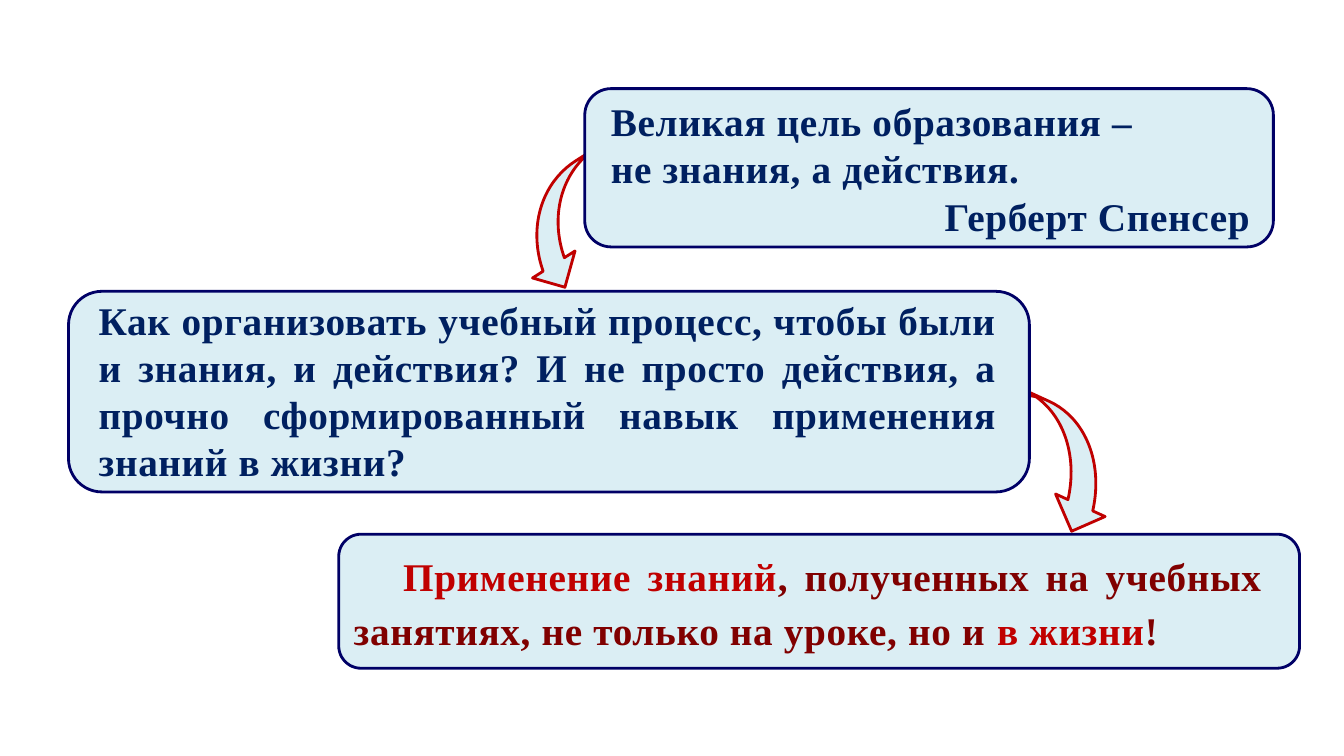
from pptx import Presentation
from pptx import util as u
from pptx.dml.color import RGBColor
from pptx.enum import shapes, text

NAVY, RED, MAROON = "002060", "C00000", "800000"
LEFT, RIGHT, FULL = text.PP_ALIGN.LEFT, text.PP_ALIGN.RIGHT, text.PP_ALIGN.JUSTIFY


def rgb(code):
    return RGBColor.from_string(code)


def draw(kind, area, edge):
    shape = deck.add_shape(kind, *map(u.Inches, area))
    shape.shadow.inherit = False
    shape.fill.solid()
    shape.fill.fore_color.rgb = rgb("DBEEF4")
    shape.line.color.rgb = rgb(edge)
    shape.line.width = u.Pt(2)
    return shape


show = Presentation()
show.slide_width, show.slide_height = u.Inches(13.33), u.Inches(7.5)
slide = show.slides.add_slide(show.slide_layouts[6])
deck = slide.shapes

arrows = [
    ((9.58, 3.37, 1.08, 2.15), 294.5, True),
    ((5.53, 0.91, 1, 2.15), 57.5, False),
]
for area, turn, flip in arrows:
    arrow = draw(shapes.MSO_SHAPE.CURVED_RIGHT_ARROW, area, RED)
    arrow.rotation = turn
    if flip:
        arrow._element.spPr.xfrm.set("flipH", "1")

goal = [
    (LEFT, [("Великая цель образования –", NAVY)]),
    (LEFT, [("не знания, а действия.", NAVY)]),
    (RIGHT, [("Герберт Спенсер", NAVY)]),
]
query = [
    (FULL, [("Как организовать учебный процесс, чтобы были и знания, и действия? "
             "И не просто действия, а прочно сформированный навык применения "
             "знаний в жизни?", NAVY)]),
]
answer = [
    (FULL, [
        ("Применение знаний", RED),
        (", полученных на учебных занятиях, не только на уроке, но и ", MAROON),
        ("в жизни", RED),
        ("!", MAROON),
    ]),
]
cards = [
    ((3.36, 5.3, 9.53, 1.33), (3.41, 5.36, 9.21, 1.15), answer),
    ((5.8, 0.88, 6.83, 1.57), (5.96, 0.92, 6.66, 1.51), goal),
    ((0.68, 2.89, 9.53, 1.99), (0.88, 2.89, 9.11, 1.99), query),
]
for panel, area, paras in cards:
    draw(shapes.MSO_SHAPE.ROUNDED_RECTANGLE, panel, "000066")
    frame = deck.add_textbox(*map(u.Inches, area)).text_frame
    frame.word_wrap = True
    if paras is goal:
        frame.margin_right = u.Inches(0.22)
    for num, (align, runs) in enumerate(paras):
        para = frame.add_paragraph() if num else frame.paragraphs[0]
        para.alignment = align
        if paras is answer:
            para.line_spacing = 1.15
            para.space_after = u.Pt(10)
            para._p.get_or_add_pPr().set("indent", str(u.Inches(0.49)))
        para.font.name = "Times New Roman"
        para.font.size = u.Pt(28)
        para.font.bold = True
        for words, tone in runs:
            run = para.add_run()
            run.text = words
            run.font.color.rgb = rgb(tone)
            run._r.get_or_add_rPr().set("spc", "50")

show.save("out.pptx")
